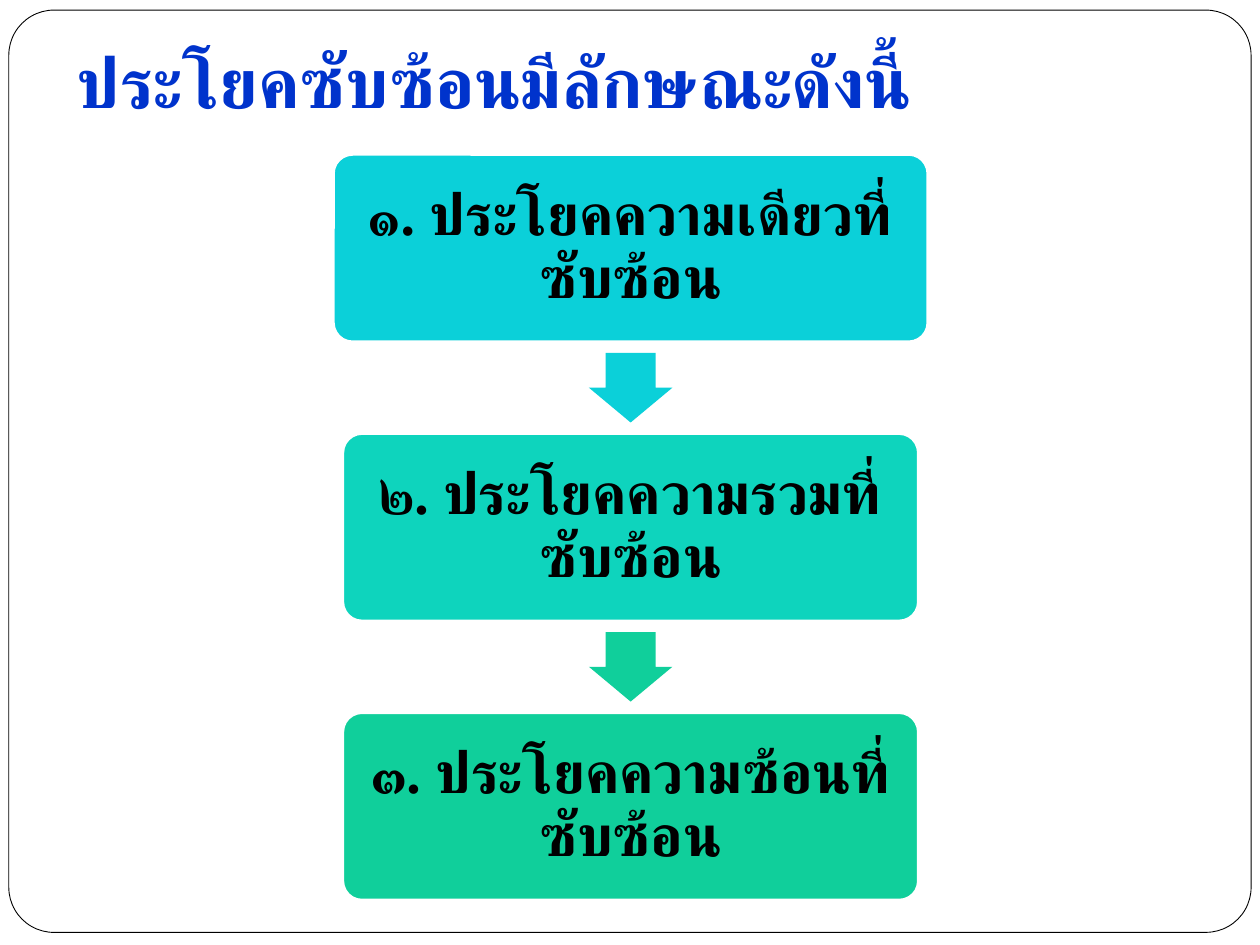
from lxml import etree
from pptx import Presentation
from pptx.dml.color import RGBColor
from pptx.enum.lang import MSO_LANGUAGE_ID
from pptx.enum.shapes import MSO_SHAPE
from pptx.enum.text import MSO_ANCHOR, MSO_AUTO_SIZE, PP_ALIGN
from pptx.oxml.ns import qn
from pptx.util import Inches, Pt

ROUNDED, ARROW = MSO_SHAPE.ROUNDED_RECTANGLE, MSO_SHAPE.RIGHT_ARROW
MIDDLE, BOTTOM = MSO_ANCHOR.MIDDLE, MSO_ANCHOR.BOTTOM
LEFT, CENTER = PP_ALIGN.LEFT, PP_ALIGN.CENTER
THAI, NO_FIT = MSO_LANGUAGE_ID.THAI, MSO_AUTO_SIZE.NONE
TITLE_ONLY = 5
WIDTH, HEIGHT = 10, 7.5
THAI_FONT = "Times New Roman"
COLORS = {"white": "FFFFFF", "black": "000000", "title": "0033CC",
          "cyan": "0BD0D9", "teal": "0ED4BD", "green": "10CF9B"}
STEPS = [("๑. ประโยคความเดียวที่ซับซ้อน", "cyan", 4.71),
         ("๒. ประโยคความรวมที่ซับซ้อน", "teal", 4.56),
         ("๓. ประโยคความซ้อนที่ซับซ้อน", "green", 4.56)]
ARROW_COLORS = ["cyan", "green"]


def rgb(name):
    """Return the named palette colour."""
    return RGBColor.from_string(COLORS[name])


def set_text(sp, text, *, size, color, font, align, anchor, margins,
             line_spacing=None, space_after=0):
    """Write one bold Thai paragraph into a shape."""
    tf = sp.text_frame
    tf.word_wrap, tf.auto_size, tf.vertical_anchor = True, NO_FIT, anchor
    (tf.margin_left, tf.margin_top,
     tf.margin_right, tf.margin_bottom) = map(Inches, margins)
    p = tf.paragraphs[0]
    p.alignment, p.line_spacing = align, line_spacing
    p.space_before, p.space_after = Pt(0), Pt(space_after)
    r = p.add_run()
    r.text = text
    r.font.size, r.font.bold, r.font.name = Pt(size), True, font
    r.font.language_id = THAI
    r.font.color.rgb = rgb(color)
    etree.SubElement(r.font._element, qn("a:cs"), typeface=THAI_FONT)


def add_block(s, kind, box, fill, adjustments, line=None, line_width=1):
    """Add a flat preset shape in the given box."""
    sp = s.shapes.add_shape(kind, *map(Inches, box))
    sp.shadow.inherit = False
    for i, value in enumerate(adjustments):
        sp.adjustments[i] = value
    sp.fill.solid()
    sp.fill.fore_color.rgb = rgb(fill)
    if line:
        sp.line.color.rgb = rgb(line)
        sp.line.width = Pt(line_width)
    else:
        sp.line.fill.background()
    return sp


def add_frame(s, box):
    """Add the thin rounded frame behind the content."""
    sp = add_block(s, ROUNDED, box, "white", [0.049], "black", 0.5)
    s.shapes._spTree.insert(2, sp._element)


def add_title(s, box, text):
    """Place and format the title placeholder."""
    sp = s.shapes.title
    sp.left, sp.top, sp.width, sp.height = map(Inches, box)
    set_text(sp, text, size=40, color="title", font="Calibri", align=LEFT,
             anchor=BOTTOM, margins=(0.1, 0.05, 0.1, 0.1))


def add_flow(s, box):
    """Stack the steps down the box with an arrow in each gap."""
    left, top, width, height = box
    center = left + width / 2
    gap = height / 10 * 1.245
    step_h = (height - gap * (len(STEPS) - 1)) / len(STEPS)
    arrow_w, arrow_h = gap * 0.75, gap * 0.9
    for i, (text, fill, step_w) in enumerate(STEPS):
        y = top + i * (step_h + gap)
        sp = add_block(s, ROUNDED, (center - step_w / 2, y, step_w, step_h),
                       fill, [0.1], "white")
        set_text(sp, text, size=33, color="black", font=THAI_FONT, align=CENTER,
                 anchor=MIDDLE, margins=(0.14,) * 4, line_spacing=0.9,
                 space_after=11.5)
        if i < len(ARROW_COLORS):
            middle = y + step_h + gap / 2
            arrow = add_block(s, ARROW, (center - arrow_w / 2, middle - arrow_h / 2,
                                         arrow_w, arrow_h),
                              ARROW_COLORS[i], [0.6, 0.5])
            arrow.rotation = 90


def main():
    """Build and save the slide."""
    prs = Presentation()
    prs.slide_width, prs.slide_height = Inches(WIDTH), Inches(HEIGHT)
    s = prs.slides.add_slide(prs.slide_layouts[TITLE_ONLY])
    add_frame(s, (0.07, 0.08, 9.86, 7.32))
    add_title(s, (0.51, 0.3, 8.99, 0.77), "ประโยคซับซ้อนมีลักษณะดังนี้")
    add_flow(s, (2.65, 1.23, 4.71, 5.91))
    prs.save("out.pptx")


if __name__ == "__main__":
    main()
